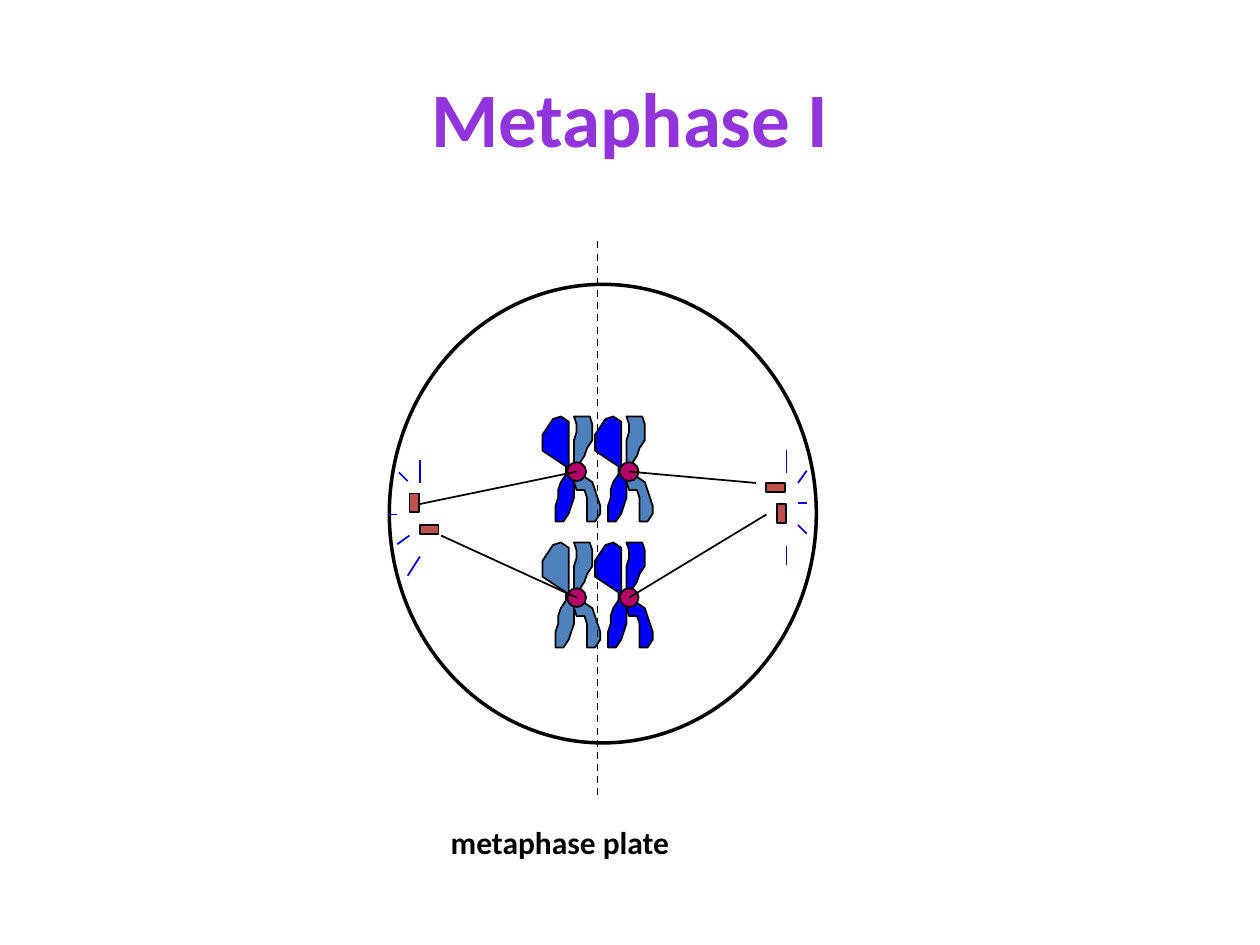
from typing import NamedTuple

from pptx import Presentation
from pptx.dml.color import RGBColor
from pptx.enum.dml import MSO_LINE_DASH_STYLE as DASH
from pptx.enum.shapes import MSO_CONNECTOR, MSO_SHAPE
from pptx.enum.text import MSO_ANCHOR, MSO_AUTO_SIZE, PP_ALIGN
from pptx.oxml.ns import qn
from pptx.util import Pt

BLACK = RGBColor(0x00, 0x00, 0x00)
WHITE = RGBColor(0xFF, 0xFF, 0xFF)
PURPLE = RGBColor(0x92, 0x34, 0xDB)
BLUE = RGBColor(0x00, 0x00, 0xFF)
STEEL = RGBColor(0x4F, 0x81, 0xBD)
MAGENTA = RGBColor(0xB5, 0x00, 0x69)
RED = RGBColor(0xC0, 0x50, 0x4D)

# Chromatid outlines around the centromere, in steps of 1.5 pt
STEP = 1.5
LEFT_CHROMATID = [
    (0, 0), (-3, -1), (-3, -19), (-6, -21), (-9, -20), (-13, -14), (-13, -8),
    (-4, -2), (-4, 1), (-6, 4), (-7, 7), (-7, 10), (-8, 13), (-8, 19),
    (-5, 19), (-3, 16), (-2, 13), (-1, 10), (-1, 1),
]
RIGHT_CHROMATID = [
    (0, 0), (-1, -3), (-1, -12), (0, -15), (0, -18), (-1, -21), (5, -21),
    (6, -18), (6, -12), (4, -9), (3, -6), (1, -3), (0, 0), (6, 4), (9, 13),
    (9, 16), (7, 19), (4, 19), (4, 10), (3, 7), (0, 7), (-1, 4), (-1, 1),
]
# Centromere grid: two columns and two rows
COLS = (329.5, 359.5)
ROWS = (269.5, 341.5)
CENTROMERE = 10.8


class Chromosome(NamedTuple):
    col: int
    row: int
    left: RGBColor
    right: RGBColor


class Segment(NamedTuple):
    x1: float
    y1: float
    x2: float
    y2: float


class Box(NamedTuple):
    x: float
    y: float
    w: float
    h: float


CHROMOSOMES = [
    Chromosome(0, 1, STEEL, STEEL),
    Chromosome(1, 0, BLUE, STEEL),
    Chromosome(0, 0, BLUE, STEEL),
    Chromosome(1, 1, BLUE, BLUE),
]
CENTRIOLES = [
    Box(444, 288, 5.3, 10.8), Box(234, 282, 5.3, 10.8),
    Box(437.8, 275.8, 10.8, 5.3), Box(239.8, 300, 10.8, 5.3),
]
ASTER_RAYS = [
    # left pole
    Segment(240, 318, 233, 329), Segment(234, 306, 227, 311),
    Segment(222, 294, 227, 294), Segment(228, 270, 233, 275),
    Segment(240, 276, 240, 263),
    # right pole
    Segment(449.5, 270, 449.5, 257), Segment(456, 276, 461, 269),
    Segment(456, 287.5, 461, 287.5), Segment(456, 300, 461, 305),
    Segment(449.5, 312, 449.5, 323),
]
SPINDLE_FIBRES = [
    Segment(252, 306, COLS[0], ROWS[1]), Segment(240, 288, COLS[0], ROWS[0]),
    Segment(432, 276, COLS[1], ROWS[0]), Segment(438, 294, COLS[1], ROWS[1]),
]
METAPHASE_PLATE = Segment(341.5, 138, 341.5, 455)


def style(sp, fill: RGBColor, weight: float = 1) -> None:
    sp.shadow.inherit = False
    sp.fill.solid()
    sp.fill.fore_color.rgb = fill
    sp.line.color.rgb = BLACK
    sp.line.width = Pt(weight)


def add_shape(slide, kind, box: Box, fill: RGBColor, weight: float = 1) -> None:
    style(slide.shapes.add_shape(kind, *map(Pt, box)), fill, weight)


def add_line(slide, seg: Segment, color: RGBColor = BLACK, dash=None) -> None:
    ln = slide.shapes.add_connector(MSO_CONNECTOR.STRAIGHT, *map(Pt, seg))
    ln.line.color.rgb = color
    ln.line.width = Pt(1)
    if dash:
        ln.line.dash_style = dash
    spPr = ln._element.spPr
    spPr.append(spPr.makeelement(qn("a:effectLst"), {}))


def add_chromosome(slide, c: Chromosome) -> None:
    x, y = COLS[c.col], ROWS[c.row]
    for outline, fill in ((LEFT_CHROMATID, c.left), (RIGHT_CHROMATID, c.right)):
        fb = slide.shapes.build_freeform(*outline[0], scale=Pt(STEP))
        fb.add_line_segments(outline[1:], close=True)
        style(fb.convert_to_shape(Pt(x), Pt(y)), fill)
    r = CENTROMERE / 2
    add_shape(slide, MSO_SHAPE.OVAL, Box(x - r, y - r, 2 * r, 2 * r), MAGENTA)


def set_text(sp, text: str, *, box: Box, size: float, color: RGBColor,
             align=PP_ALIGN.LEFT, anchor=MSO_ANCHOR.TOP) -> None:
    sp.left, sp.top, sp.width, sp.height = map(Pt, box)
    tf = sp.text_frame
    tf.word_wrap = True
    tf.auto_size = MSO_AUTO_SIZE.NONE
    tf.vertical_anchor = anchor
    p = tf.paragraphs[0]
    p.alignment = align
    r = p.add_run()
    r.text = text
    r.font.name = "Calibri"
    r.font.size = Pt(size)
    r.font.bold = True
    r.font.color.rgb = color


def main() -> None:
    prs = Presentation()
    prs.slide_width, prs.slide_height = Pt(720), Pt(540)
    slide = prs.slides.add_slide(prs.slide_layouts[5])

    # Title
    set_text(slide.shapes.title, "Metaphase I", box=Box(36, 21.6, 648, 90),
             size=44, color=PURPLE, align=PP_ALIGN.CENTER,
             anchor=MSO_ANCHOR.MIDDLE)

    # Cell with centrioles and asters
    add_shape(slide, MSO_SHAPE.OVAL, Box(222.5, 162.5, 244, 262), WHITE, 2)
    for box in CENTRIOLES:
        add_shape(slide, MSO_SHAPE.RECTANGLE, box, RED)
    for ray in ASTER_RAYS:
        add_line(slide, ray, BLUE)

    # Paired chromosomes
    for chromosome in CHROMOSOMES:
        add_chromosome(slide, chromosome)

    # Metaphase plate and its label
    label = slide.shapes.add_textbox(0, 0, 0, 0)
    set_text(label, "metaphase plate", box=Box(250.5, 466.5, 202, 36),
             size=18, color=BLACK)
    add_line(slide, METAPHASE_PLATE, dash=DASH.DASH)

    # Spindle fibres
    for fibre in SPINDLE_FIBRES:
        add_line(slide, fibre)

    prs.save("out.pptx")


if __name__ == "__main__":
    main()
